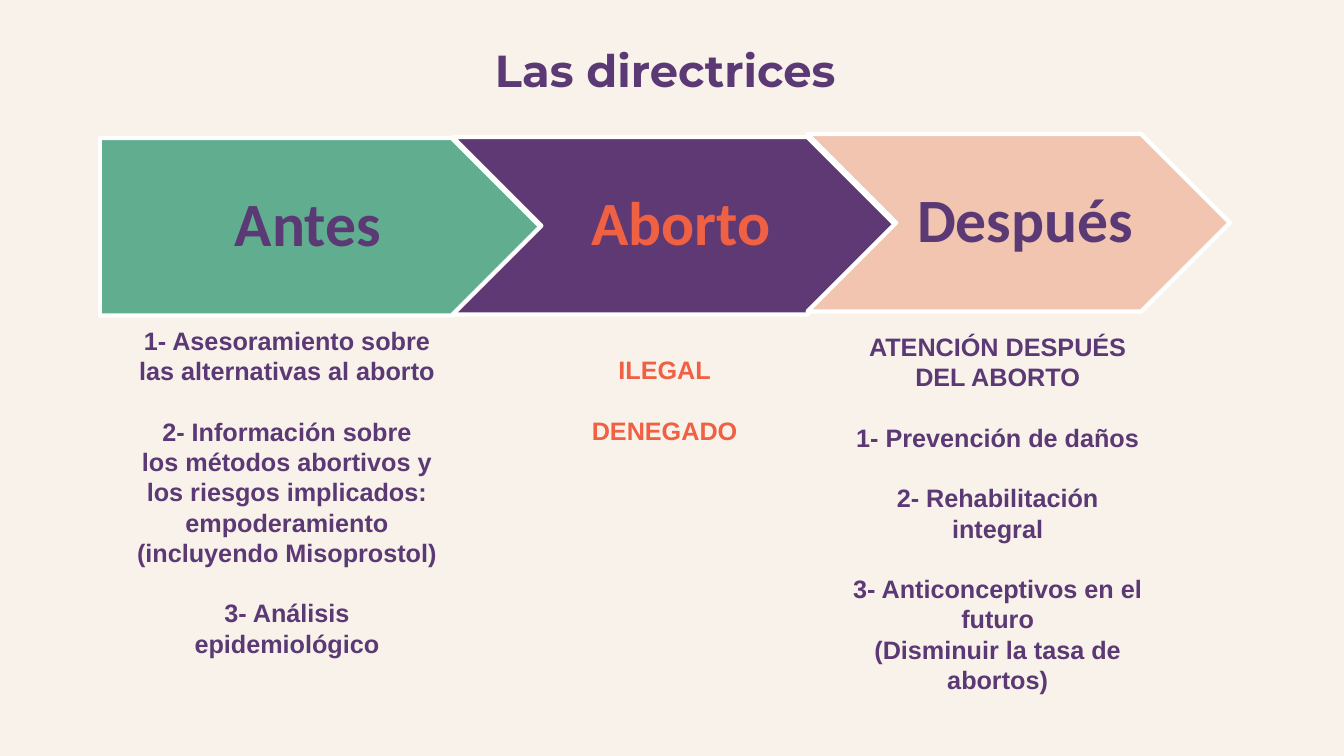
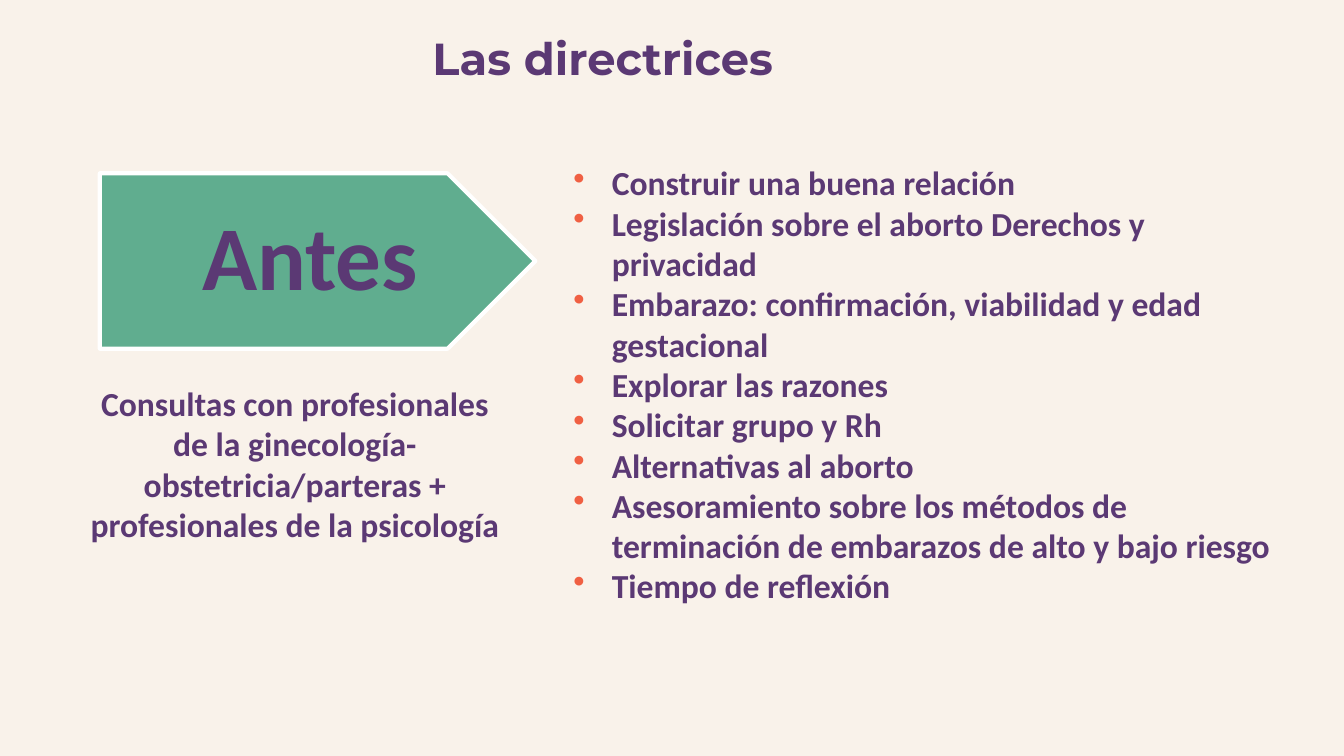
import pptx
import pptx.util
import pptx.dml.color
import pptx.enum.shapes
import pptx.enum.text
import lxml.etree
import pptx.oxml.ns

COLORS = {
    "background": "F9F2EA",
    "purple": "5B3974",
    "deep_purple": "5E3973",
    "green": "60AD8F",
    "peach": "F1C5B0",
    "orange": "F06043",
    "white": "FFFFFF",
}
WIDTH = pptx.util.Inches(13.33)
HEIGHT = pptx.util.Inches(7.5)
LINE_HEIGHT = 1.2
TITLE = "Las directrices"

PENTAGON = pptx.enum.shapes.MSO_SHAPE.PENTAGON
CHEVRON = pptx.enum.shapes.MSO_SHAPE.CHEVRON
CENTER = pptx.enum.text.PP_ALIGN.CENTER
LEFT = pptx.enum.text.PP_ALIGN.LEFT

# Each stage: shape, fill, text colour, label, arrow box, text box, groups of lines.
# Boxes are left, top, width, height in percent of the slide.
STAGES = [
    (PENTAGON, "green", "purple", "Antes",
     (7.43, 18.27, 32.78, 23.47), (9.15, 42.4, 24.4, 45.7),
     [["1- Asesoramiento sobre", "las alternativas al aborto"],
      ["2- Información sobre", "los métodos abortivos y", "los riesgos implicados:",
       "empoderamiento", "(incluyendo Misoprostol)"],
      ["3- Análisis", "epidemiológico"]]),
    (CHEVRON, "deep_purple", "orange", "Aborto",
     (33.68, 18.13, 33, 23.47), (24.45, 46.27, 50, 13.47),
     [["ILEGAL"], ["DENEGADO"]]),
    (CHEVRON, "peach", "purple", "Después",
     (60.08, 17.73, 31.43, 23.47), (62.03, 43.2, 24.4, 49.87),
     [["ATENCIÓN DESPUÉS DEL ABORTO"],
      ["1- Prevención de daños"],
      ["2- Rehabilitación", "integral"],
      ["3- Anticonceptivos en el futuro", "(Disminuir la tasa de abortos)"]]),
]

CONSULTATION = [
    "Consultas con profesionales de la ginecología-obstetricia/parteras +",
    "profesionales de la psicología",
]
COUNSELLING = [
    "Construir una buena relación",
    "Legislación sobre el aborto Derechos y privacidad",
    "Embarazo: confirmación, viabilidad y edad gestacional",
    "Explorar las razones",
    "Solicitar grupo y Rh",
    "Alternativas al aborto",
    "Asesoramiento sobre los métodos de terminación de embarazos de alto y bajo riesgo",
    "Tiempo de reflexión",
]


def rgb(color):
    return pptx.dml.color.RGBColor.from_string(COLORS[color])


def place(box):
    """Turn a box in percent of the slide into lengths."""
    return [int(share * side / 100)
            for share, side in zip(box, (WIDTH, HEIGHT, WIDTH, HEIGHT))]


def style(paragraph, name, size, color):
    font = paragraph.font
    font.name = name
    font.size = pptx.util.Pt(size)
    font.bold = True
    font.color.rgb = rgb(color)


def add_bullet(paragraph, color):
    properties = paragraph._p.get_or_add_pPr()
    indent = pptx.util.Inches(0.38)
    properties.set("marL", str(indent))
    properties.set("indent", str(-indent))
    tag = pptx.oxml.ns.qn
    bullet_color = lxml.etree.SubElement(properties, tag("a:buClr"))
    lxml.etree.SubElement(bullet_color, tag("a:srgbClr"), val=COLORS[color])
    lxml.etree.SubElement(properties, tag("a:buChar"), char="•")


def add_text(slide, box, groups, name, size, color, align=CENTER, bullet=None):
    """Write groups of lines, with one line of space between groups."""
    frame = slide.shapes.add_textbox(*place(box)).text_frame
    frame.word_wrap = True
    line_height = pptx.util.Pt(size * LINE_HEIGHT)
    for group_index, group in enumerate(groups):
        for line_index, line in enumerate(group):
            first = group_index == line_index == 0
            paragraph = frame.paragraphs[0] if first else frame.add_paragraph()
            paragraph.text = line
            paragraph.alignment = align
            if bullet:
                add_bullet(paragraph, bullet)
            paragraph.line_spacing = line_height
            if group_index and not line_index:
                paragraph.space_before = line_height
            style(paragraph, name, size, color)


def add_title(slide, left, top):
    frame = slide.shapes.add_textbox(*place((left, top, 36.3, 8.5))).text_frame
    frame.word_wrap = True
    paragraph = frame.paragraphs[0]
    paragraph.text = TITLE
    paragraph.alignment = CENTER
    style(paragraph, "Montserrat", 32, "purple")


def add_arrow(slide, kind, box, fill, label, color, size, insets):
    """Add a stage arrow; insets are left, right and vertical, in inches."""
    shape = slide.shapes.add_shape(kind, *place(box))
    shape.shadow.inherit = False
    shape.fill.solid()
    shape.fill.fore_color.rgb = rgb(fill)
    shape.line.color.rgb = rgb("white")
    shape.line.width = pptx.util.Pt(3)
    frame = shape.text_frame
    frame.word_wrap = True
    frame.vertical_anchor = pptx.enum.text.MSO_ANCHOR.MIDDLE
    left, right, vertical = map(pptx.util.Inches, insets)
    frame.margin_left, frame.margin_right = left, right
    frame.margin_top = frame.margin_bottom = vertical
    paragraph = frame.paragraphs[0]
    paragraph.text = label
    paragraph.alignment = CENTER
    paragraph.line_spacing = 0.9
    style(paragraph, "Calibri", size, color)


def build_overview(slide):
    add_title(slide, 31.35, 4.93)
    for kind, fill, color, label, arrow_box, text_box, groups in STAGES:
        left_inset = 0.26 if kind == PENTAGON else 0.19
        add_arrow(slide, kind, arrow_box, fill, label, color, 44,
                  (left_inset, 0.06, 0.13))
        add_text(slide, text_box, groups, "Arial", 18, color)


def build_before(slide):
    add_title(slide, 26.7, 3.47)
    kind, fill, color, label = STAGES[0][:4]
    add_arrow(slide, kind, (7.43, 22.93, 32.4, 23.2), fill, label, color, 65,
              (0.38, 0.09, 0.19))
    add_text(slide, (5.63, 50, 32.63, 22.93), [CONSULTATION], "Calibri", 24, color)
    add_text(slide, (41.93, 20.8, 53.55, 59.2), [COUNSELLING], "Calibri", 24, color,
             align=LEFT, bullet="orange")


def main():
    presentation = pptx.Presentation()
    presentation.slide_width = WIDTH
    presentation.slide_height = HEIGHT
    background = presentation.slide_master.background.fill
    background.solid()
    background.fore_color.rgb = rgb("background")
    blank = presentation.slide_layouts[6]
    for build in (build_overview, build_before):
        build(presentation.slides.add_slide(blank))
    presentation.save("out.pptx")


if __name__ == "__main__":
    main()
